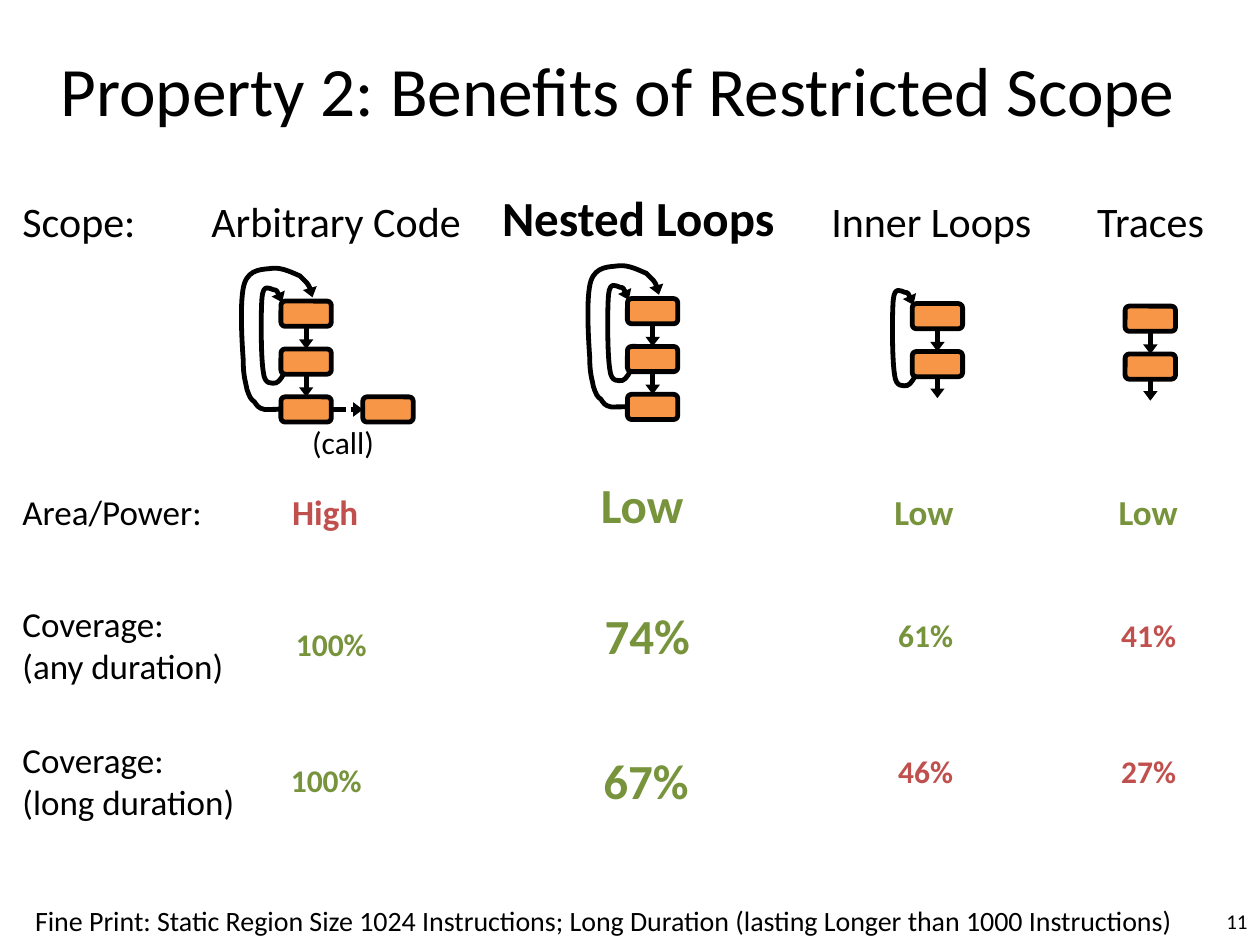
import pptx
import pptx.dml.color
import pptx.enum.dml
import pptx.enum.shapes
import pptx.enum.text
import pptx.oxml.ns
import pptx.util
from lxml import etree
from pptx.util import Inches

BLACK, RED, GREEN, ORANGE = "000000", "C0504D", "77933C", "F79646"
LINE_WIDTH = 2.75
BOX_WIDTH, BOX_HEIGHT, BOX_PITCH = 0.4, 0.2, 0.38
STUB_LENGTH = 0.17

ALIGN = pptx.enum.text.PP_ALIGN
ANCHOR = pptx.enum.text.MSO_ANCHOR
AUTO_SIZE = pptx.enum.text.MSO_AUTO_SIZE

# Bezier points (start, then three per curve), measured from the top box's corner
INNER_LOOP = [
    (0.04, 0.53),
    (0.02, 0.59), (-0.01, 0.64), (-0.04, 0.65),
    (-0.07, 0.65), (-0.13, 0.67), (-0.14, 0.56),
    (-0.16, 0.44), (-0.16, 0.08), (-0.15, -0.03),
    (-0.14, -0.14), (-0.09, -0.1), (-0.06, -0.09),
    (-0.03, -0.09), (-0.01, -0.04), (0.01, 0.01),
]
OUTER_LOOP = [
    (0.25, 0.8),
    (0.2, 0.82), (0.16, 0.84), (0.1, 0.85),
    (0.04, 0.86), (-0.08, 0.86), (-0.13, 0.86),
    (-0.18, 0.85), (-0.19, 0.83), (-0.21, 0.8),
    (-0.24, 0.78), (-0.25, 0.76), (-0.27, 0.7),
    (-0.28, 0.64), (-0.3, 0.6), (-0.3, 0.46),
    (-0.31, 0.32), (-0.33, -0.02), (-0.29, -0.14),
    (-0.25, -0.26), (-0.14, -0.25), (-0.07, -0.26),
    (0.01, -0.27), (0.1, -0.22), (0.15, -0.2),
    (0.21, -0.14), (0.23, -0.13), (0.25, -0.03),
]

# text, left, top, width, height, size, colour, bold
LABELS = [
    ("Scope:", 0.08, 1.5, 1.17, 0.5, 24, BLACK, False),
    ("Arbitrary Code", 1.58, 1.5, 2.36, 0.5, 24, BLACK, False),
    ("Inner Loops", 6.5, 1.5, 1.83, 0.5, 24, BLACK, False),
    ("Traces", 8.61, 1.5, 1.17, 0.5, 24, BLACK, False),
    ("Area/Power:", 0.08, 3.84, 1.67, 0.44, 20, BLACK, False),
    ("High", 2.22, 3.84, 0.83, 0.44, 20, RED, True),
    ("Low", 4.67, 3.72, 1.28, 0.57, 28, GREEN, True),
    ("Low", 7, 3.84, 0.83, 0.44, 20, GREEN, True),
    ("Low", 8.78, 3.84, 0.83, 0.44, 20, GREEN, True),
    ("Coverage:\n(any duration)", 0.08, 4.73, 1.87, 0.77, 20, BLACK, False),
    ("100%", 2.25, 4.91, 0.78, 0.4, 18, GREEN, True),
    ("74%", 4.7, 4.76, 0.88, 0.57, 28, GREEN, True),
    ("61%", 7.03, 4.84, 0.78, 0.4, 18, GREEN, True),
    ("41%", 8.8, 4.84, 0.78, 0.4, 18, RED, True),
    ("Coverage:\n(long duration)", 0.08, 5.81, 1.96, 0.77, 20, BLACK, False),
    ("100%", 2.21, 5.99, 0.78, 0.4, 18, GREEN, True),
    ("67%", 4.69, 5.91, 1, 0.57, 28, GREEN, True),
    ("46%", 7.03, 5.92, 0.78, 0.4, 18, RED, True),
    ("27%", 8.8, 5.92, 0.78, 0.4, 18, RED, True),
    ("Fine Print: Static Region Size 1024 Instructions; "
     "Long Duration (lasting Longer than 1000 Instructions)",
     0.18, 7.12, 9.4, 0.37, 16, BLACK, False),
]


def rgb(colour):
    return pptx.dml.color.RGBColor.from_string(colour)


def add_text(slide, text, left, top, width, height, size, colour=BLACK,
             bold=False, align=ALIGN.LEFT, anchor=ANCHOR.TOP, wrap=True):
    text_box = slide.shapes.add_textbox(
        Inches(left), Inches(top), Inches(width), Inches(height))
    text_frame = text_box.text_frame
    text_frame.text = text
    text_frame.word_wrap = wrap
    text_frame.vertical_anchor = anchor
    if anchor == ANCHOR.TOP:
        text_frame.auto_size = AUTO_SIZE.SHAPE_TO_FIT_TEXT
    for paragraph in text_frame.paragraphs:
        paragraph.alignment = align
        for run in paragraph.runs:
            run.font.name = "Calibri"
            run.font.size = pptx.util.Pt(size)
            run.font.bold = bold
            run.font.color.rgb = rgb(colour)


def style_line(line):
    line.color.rgb = rgb(BLACK)
    line.width = pptx.util.Pt(LINE_WIDTH)


def add_arrowhead(line):
    etree.SubElement(line._get_or_add_ln(), pptx.oxml.ns.qn("a:tailEnd"),
                     type="triangle", w="med", len="sm")


def add_box(slide, left, top):
    box = slide.shapes.add_shape(
        pptx.enum.shapes.MSO_SHAPE.ROUNDED_RECTANGLE,
        Inches(left), Inches(top), Inches(BOX_WIDTH), Inches(BOX_HEIGHT))
    box.shadow.inherit = False
    box.fill.solid()
    box.fill.fore_color.rgb = rgb(ORANGE)
    style_line(box.line)
    return box


def add_arrow(slide, source, source_site, target=None, target_site=0, dashed=False):
    """Join two boxes, or drop a short stub below the source."""
    x = source.left + source.width // 2
    y = source.top + source.height
    arrow = slide.shapes.add_connector(
        pptx.enum.shapes.MSO_CONNECTOR.STRAIGHT, x, y, x, y + Inches(STUB_LENGTH))
    arrow.begin_connect(source, source_site)
    if target is not None:
        arrow.end_connect(target, target_site)
    style_line(arrow.line)
    if dashed:
        arrow.line.dash_style = pptx.enum.dml.MSO_LINE.SQUARE_DOT
    add_arrowhead(arrow.line)
    etree.SubElement(arrow._element.spPr, pptx.oxml.ns.qn("a:effectLst"))


def bend_segments(freeform):
    """Turn every three line segments into one cubic Bezier curve."""
    segments = list(freeform._element.iter(pptx.oxml.ns.qn("a:lnTo")))
    for first in range(0, len(segments), 3):
        curve = etree.Element(pptx.oxml.ns.qn("a:cubicBezTo"))
        segments[first].addprevious(curve)
        for segment in segments[first:first + 3]:
            curve.append(segment[0])
            segment.getparent().remove(segment)


def add_loop(slide, controls, left, top):
    points = [(Inches(left + x), Inches(top + y)) for x, y in controls]
    builder = slide.shapes.build_freeform(*points[0])
    builder.add_line_segments(points[1:], close=False)
    loop = builder.convert_to_shape()
    bend_segments(loop)
    loop.shadow.inherit = False
    loop.fill.background()
    style_line(loop.line)
    add_arrowhead(loop.line)


def add_flow(slide, left, top, box_count, loops=(), has_exit=False):
    """Draw a column of chained boxes with its back edges."""
    for controls in loops:
        add_loop(slide, controls, left, top)
    boxes = [add_box(slide, left, top + index * BOX_PITCH) for index in range(box_count)]
    for upper, lower in zip(boxes, boxes[1:]):
        add_arrow(slide, upper, 2, lower, 0)
    if has_exit:
        add_arrow(slide, boxes[-1], 2)
    return boxes


def main():
    presentation = pptx.Presentation()
    presentation.slide_width, presentation.slide_height = Inches(10), Inches(7.5)
    slide = presentation.slides.add_slide(presentation.slide_layouts[6])

    add_text(slide, "Property 2: Benefits of Restricted Scope", 0.08, 0.08, 9.65, 1.25,
             39.6, align=ALIGN.CENTER, anchor=ANCHOR.MIDDLE)
    add_text(slide, "Nested Loops", 3.83, 1.44, 2.47, 0.57, 28, bold=True,
             align=ALIGN.CENTER)
    for label in LABELS:
        add_text(slide, *label)

    arbitrary_boxes = add_flow(slide, 2.23, 2.39, 3, (INNER_LOOP, OUTER_LOOP))
    called_box = add_box(slide, 2.88, 2.39 + 2 * BOX_PITCH)
    add_arrow(slide, arbitrary_boxes[-1], 3, called_box, 1, dashed=True)
    add_text(slide, "(call)", 2.38, 3.31, 0.7, 0.4, 18, wrap=False)

    add_flow(slide, 4.98, 2.37, 3, (INNER_LOOP, OUTER_LOOP))
    add_flow(slide, 7.24, 2.41, 2, (INNER_LOOP,), has_exit=True)
    add_flow(slide, 8.93, 2.43, 2, has_exit=True)

    add_text(slide, "11", 9.5, 7.11, 0.5, 0.4, 12, align=ALIGN.RIGHT,
             anchor=ANCHOR.MIDDLE)
    presentation.save("out.pptx")


if __name__ == "__main__":
    main()
